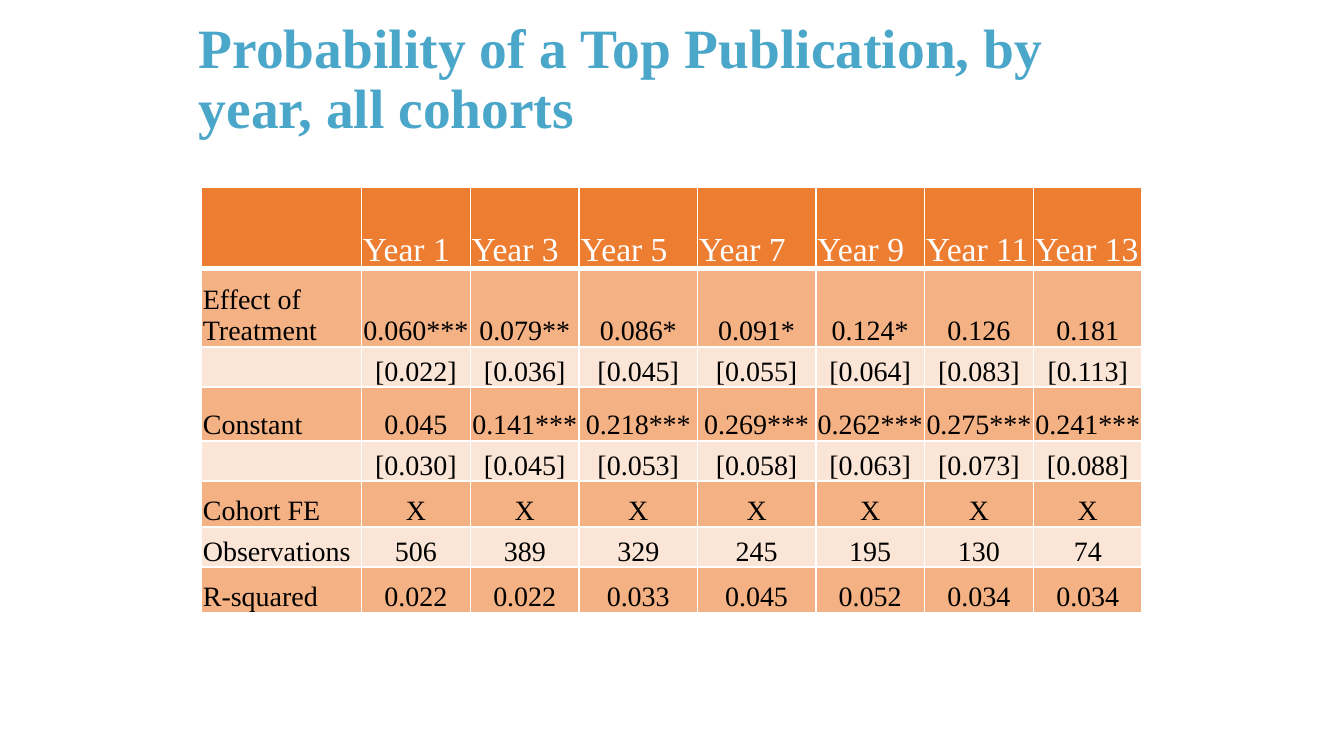
from lxml.etree import SubElement
from pptx import Presentation
from pptx.dml.color import RGBColor
from pptx.enum.text import MSO_ANCHOR, PP_ALIGN
from pptx.oxml.ns import qn
from pptx.util import Inches, Pt

WIDTH = 10
HEIGHT = WIDTH * 9 / 16
FONT = "Times New Roman"
COLORS = {"title": "4BA7C9", "head": "ED7D31", "dark": "F4B183",
          "light": "FBE5D6", "white": "FFFFFF", "black": "000000"}
COLS = [1.19, 0.81, 0.81, 0.88, 0.88, 0.81, 0.81, 0.81]
ROWS = [0.61, 0.58, 0.3, 0.4, 0.3, 0.34, 0.3, 0.34]
DATA = [
    ["", "Year 1", "Year 3", "Year 5", "Year 7", "Year 9", "Year 11", "Year 13"],
    ["Effect of Treatment", "0.060***", "0.079**", "0.086*", "0.091*",
     "0.124*", "0.126", "0.181"],
    ["", "[0.022]", "[0.036]", "[0.045]", "[0.055]", "[0.064]", "[0.083]", "[0.113]"],
    ["Constant", "0.045", "0.141***", "0.218***", "0.269***",
     "0.262***", "0.275***", "0.241***"],
    ["", "[0.030]", "[0.045]", "[0.053]", "[0.058]", "[0.063]", "[0.073]", "[0.088]"],
    ["Cohort FE"] + ["X"] * 7,
    ["Observations", "506", "389", "329", "245", "195", "130", "74"],
    ["R-squared", "0.022", "0.022", "0.033", "0.045", "0.052", "0.034", "0.034"],
]


def color(name):
    return RGBColor.from_string(COLORS[name])


def place(left, top, width, height):
    return (Inches(left * WIDTH), Inches(top * HEIGHT),
            Inches(width * WIDTH), Inches(height * HEIGHT))


def style(para, size, name, bold=False):
    para.font.name = FONT
    para.font.size = Pt(size)
    para.font.bold = bold
    para.font.color.rgb = color(name)


def add_title(slide, text):
    spot = place(1.38 / WIDTH, 0.06 / HEIGHT, 7.12 / WIDTH, 1.08 / HEIGHT)
    frame = slide.shapes.add_textbox(*spot).text_frame
    frame.word_wrap = True
    frame.vertical_anchor = MSO_ANCHOR.MIDDLE
    para = frame.paragraphs[0]
    para.text = text
    para.line_spacing = 0.9
    style(para, 29.7, "title", True)


def add_edges(cell, top, bottom):
    props = cell._tc.get_or_add_tcPr()
    for side, width in (("L", 1), ("R", 1), ("T", top), ("B", bottom)):
        line = SubElement(props, qn(f"a:ln{side}"), w=str(Pt(width)))
        fill = SubElement(line, qn("a:solidFill"))
        SubElement(fill, qn("a:srgbClr"), val=COLORS["white"])


def fill_cell(cell, text, row, col):
    head = row == 0
    add_edges(cell, 3 if row == 1 else 1, 3 if head else 1)
    cell.fill.solid()
    cell.fill.fore_color.rgb = color("head" if head else "dark" if row % 2 else "light")
    cell.margin_left = cell.margin_right = cell.margin_top = Inches(0.01)
    cell.margin_bottom = 0
    cell.vertical_anchor = MSO_ANCHOR.BOTTOM
    para = cell.text_frame.paragraphs[0]
    if text:
        para.text = text
    para.alignment = PP_ALIGN.LEFT if head or col == 0 else PP_ALIGN.CENTER
    style(para, 18 if head else 15, "white" if head else "black")


def add_grid(slide):
    spot = place(0.15, 1.39 / HEIGHT, sum(COLS) / WIDTH, sum(ROWS) / HEIGHT)
    table = slide.shapes.add_table(len(ROWS), len(COLS), *spot).table
    for col, width in zip(table.columns, COLS):
        col.width = Inches(width)
    for row, height in zip(table.rows, ROWS):
        row.height = Inches(height)
    for row, line in enumerate(DATA):
        for col, text in enumerate(line):
            fill_cell(table.cell(row, col), text, row, col)


def main():
    deck = Presentation()
    deck.slide_width, deck.slide_height = Inches(WIDTH), Inches(HEIGHT)
    slide = deck.slides.add_slide(deck.slide_layouts[6])
    add_title(slide, "Probability of a Top Publication, by year, all cohorts")
    add_grid(slide)
    deck.save("out.pptx")


if __name__ == "__main__":
    main()
